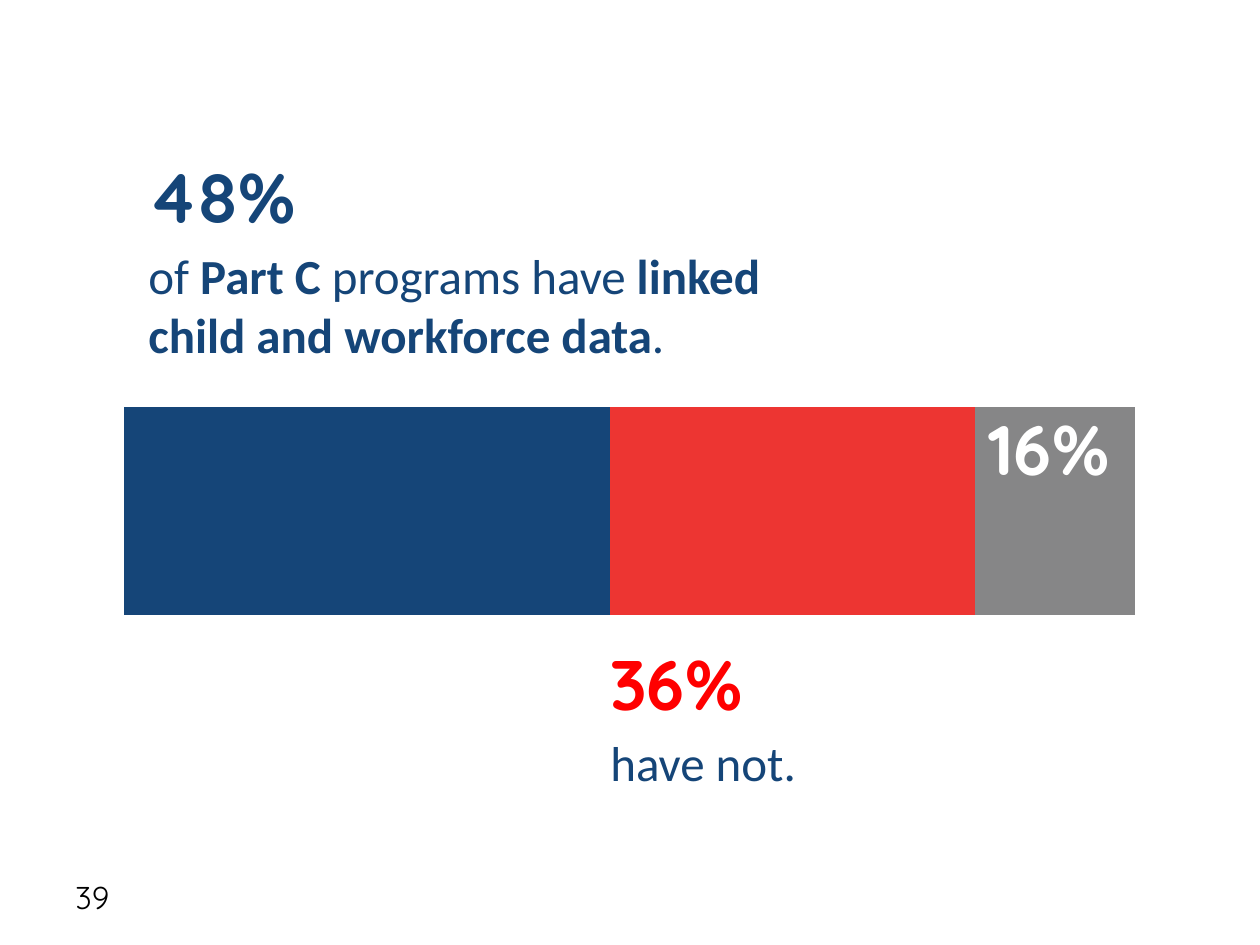
import pptx
import pptx.chart.data
import pptx.dml.color
import pptx.enum.chart
import pptx.enum.text
import pptx.oxml
import pptx.oxml.ns
import pptx.util

RGBColor = pptx.dml.color.RGBColor
NAVY = RGBColor(0x15, 0x45, 0x78)
CORAL = RGBColor(0xED, 0x35, 0x32)
RED = RGBColor(0xFF, 0x00, 0x00)
GRAY = RGBColor(0x86, 0x86, 0x87)
WHITE = RGBColor(0xFF, 0xFF, 0xFF)
BLACK = RGBColor(0x00, 0x00, 0x00)

PX_PER_INCH = 126


def px(length):
    return pptx.util.Emu(round(length * 914400 / PX_PER_INCH))


class SlideBuilder:
    number_font = "Quicksand"
    body_font = "Calibri"

    def __init__(self, slide):
        self.slide = slide

    def text(self, box, runs, font, size, color, bold=False,
             anchor=pptx.enum.text.MSO_ANCHOR.TOP):
        """Add one paragraph; runs is a list of (text, bold or None to inherit)."""
        shape = self.slide.shapes.add_textbox(*map(px, box))
        frame = shape.text_frame
        frame.word_wrap = True
        frame.vertical_anchor = anchor
        paragraph = frame.paragraphs[0]
        paragraph.font.name = font
        paragraph.font.size = pptx.util.Pt(size)
        paragraph.font.color.rgb = color
        paragraph.font.bold = bold
        for content, run_bold in runs:
            run = paragraph.add_run()
            run.text = content
            run.font.bold = run_bold

    def percentage(self, box, content, color):
        self.text(box, [(content, None)], self.number_font, 40, color, bold=True)

    def statement(self, box, runs):
        self.text(box, runs, self.body_font, 28, NAVY)

    def page_number(self, box, content):
        self.text(box, [(content, None)], self.number_font, 18, BLACK,
                  anchor=pptx.enum.text.MSO_ANCHOR.MIDDLE)

    def stacked_bar(self, box, segments, plot_area):
        """Draw (value, color) segments as one bar; plot_area is x, y, w, h fractions."""
        data = pptx.chart.data.CategoryChartData()
        data.categories = ["1"]
        for number, (value, _) in enumerate(segments, 1):
            data.add_series(f"Series {number}", [value])
        chart = self.slide.shapes.add_chart(
            pptx.enum.chart.XL_CHART_TYPE.BAR_STACKED, *map(px, box), data).chart
        chart.has_legend = False
        chart.has_title = False
        chart.font.name = self.body_font
        chart.font.size = pptx.util.Pt(18)
        chart.font.color.rgb = BLACK

        chart.category_axis.visible = False
        value_axis = chart.value_axis
        value_axis.visible = False
        value_axis.has_major_gridlines = False
        value_axis.minimum_scale = 0
        value_axis.maximum_scale = sum(value for value, _ in segments)
        value_axis.major_unit = 42

        plot = chart.plots[0]
        plot.gap_width = 150
        plot.overlap = 100
        plot.vary_by_categories = False
        for series, (_, color) in zip(plot.series, segments):
            series.format.fill.solid()
            series.format.fill.fore_color.rgb = color
        self.place_plot(chart, plot_area)

    def place_plot(self, chart, plot_area):
        area = chart.element.find(".//" + pptx.oxml.ns.qn("c:plotArea"))
        for layout in area.findall(pptx.oxml.ns.qn("c:layout")):
            area.remove(layout)
        sizes = "".join(f'<c:{name} val="{value}"/>'
                        for name, value in zip("xywh", plot_area))
        area.insert(0, pptx.oxml.parse_xml(
            f'<c:layout {pptx.oxml.ns.nsdecls("c")}><c:manualLayout>'
            '<c:layoutTarget val="inner"/><c:xMode val="edge"/><c:yMode val="edge"/>'
            f'{sizes}</c:manualLayout></c:layout>'))


def main():
    presentation = pptx.Presentation()
    presentation.slide_width = px(1260)
    presentation.slide_height = px(945)
    blank_layout = presentation.slide_layouts[6]
    builder = SlideBuilder(presentation.slides.add_slide(blank_layout))

    builder.page_number((63, 872, 294, 50), "39")
    builder.stacked_bar((105, 224, 1050, 560),
                        [(100, NAVY), (75, CORAL), (33, GRAY)],
                        (0.018, 0.047, 0.963, 0.931))

    builder.percentage((136, 147, 609, 97), "48%", NAVY)
    builder.statement((136, 239, 651, 131), [
        ("of ", None), ("Part C", True), (" programs have ", None),
        ("linked child and workforce data", True), (".", None)])
    builder.percentage((598, 634, 609, 97), "36%", RED)
    builder.statement((598, 726, 559, 72), [("have not.", None)])
    builder.percentage((976, 399, 168, 97), "16%", WHITE)

    presentation.save("out.pptx")


if __name__ == "__main__":
    main()
